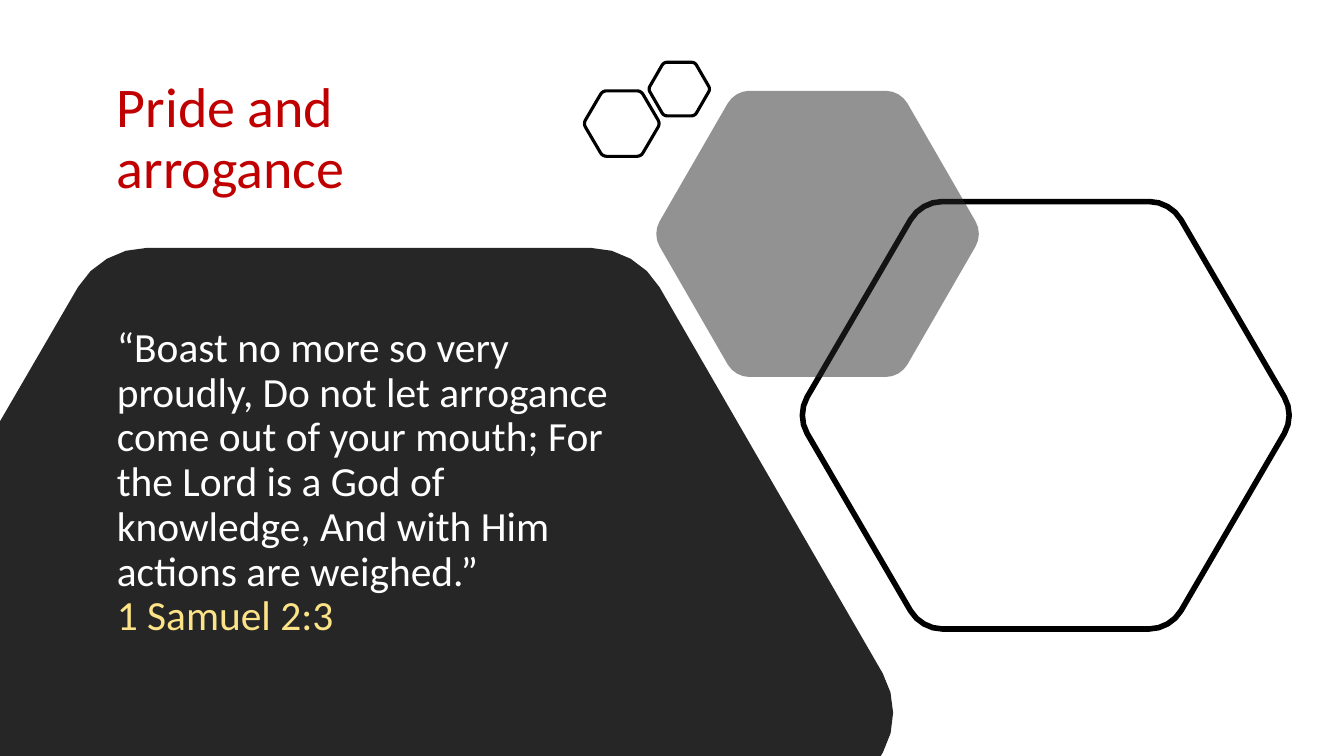
from math import hypot

from lxml.etree import SubElement
from pptx import Presentation
from pptx.dml.color import RGBColor
from pptx.enum.text import MSO_ANCHOR, MSO_AUTO_SIZE, PP_ALIGN
from pptx.oxml.ns import qn
from pptx.util import Cm, Pt

BLACK = RGBColor(0x00, 0x00, 0x00)
CHARCOAL = RGBColor(0x26, 0x26, 0x26)
RED = RGBColor(0xC0, 0x00, 0x00)
WHITE = RGBColor(0xFF, 0xFF, 0xFF)
YELLOW = RGBColor(0xFD, 0xE3, 0x88)

TITLE = "Pride and arrogance"
QUOTE = ("“Boast no more so very proudly, Do not let arrogance come out of your "
         "mouth; For the Lord is a God of knowledge, And with Him actions are weighed.” ")
VERSE = "1 Samuel 2:3"

# Lengths in centimetres; each corner is x, y and the length rounded off.
PANEL = [(0, 19.05, 0), (0, 10.62, 0), (2.54, 6.25, 1.14), (16.05, 6.25, 1.14),
         (22.82, 17.96, 1.14), (22.2, 19.05, 0)]
# Left, top, width, height, rounding, then the paint.
HEXAGONS = [
    (20.22, 5.08, 12.27, 10.77, 0.53, {"line": BLACK, "weight": 4}),
    (16.54, 2.29, 8.13, 7.21, 0.36, {"fill": CHARCOAL, "opacity": 50}),
    (14.73, 2.29, 1.88, 1.65, 0.1, {"line": BLACK, "weight": 2.25}),
    (16.36, 1.57, 1.52, 1.35, 0.08, {"line": BLACK, "weight": 2.25}),
]
CURVE_PULL = 0.6
CURVE_STEPS = 4


def hexagon_corners(left, top, width, height, rounding):
    """Corners whose rounded outline fills the given box."""
    overhang = rounding / 2 * (1 - 0.75 * CURVE_PULL)
    left, width = left - overhang, width + 2 * overhang
    middle, bottom = top + height / 2, top + height
    corners = [(0, middle), (0.25, top), (0.75, top),
               (1, middle), (0.75, bottom), (0.25, bottom)]
    return [(left + share * width, y, rounding) for share, y in corners]


def toward(start, end, distance):
    share = distance / hypot(end[0] - start[0], end[1] - start[1])
    return tuple(a + (b - a) * share for a, b in zip(start, end))


def rounded_outline(corners):
    """Points along the polygon, with a Bezier curve at each rounded corner."""
    points = []
    for index, (x, y, rounding) in enumerate(corners):
        corner = (x, y)
        if not rounding:
            points.append(corner)
            continue
        before = corners[index - 1][:2]
        after = corners[(index + 1) % len(corners)][:2]
        lengths = (rounding, rounding * (1 - CURVE_PULL))
        start, pull_in = [toward(corner, before, length) for length in lengths]
        end, pull_out = [toward(corner, after, length) for length in lengths]
        for step in range(CURVE_STEPS + 1):
            t = step / CURVE_STEPS
            weights = ((1 - t) ** 3, 3 * t * (1 - t) ** 2, 3 * t ** 2 * (1 - t), t ** 3)
            controls = (start, pull_in, pull_out, end)
            points.append(tuple(sum(w * c[axis] for w, c in zip(weights, controls))
                                for axis in (0, 1)))
    return points


def draw_rounded(slide, corners, fill=None, opacity=100, line=None, weight=1):
    first, *rest = [(Cm(x), Cm(y)) for x, y in rounded_outline(corners)]
    builder = slide.shapes.build_freeform(*first)
    builder.add_line_segments(rest, close=True)
    outline = builder.convert_to_shape()
    outline.shadow.inherit = False
    if fill is None:
        outline.fill.background()
    else:
        outline.fill.solid()
        outline.fill.fore_color.rgb = fill
        if opacity < 100:
            colour = outline.element.spPr.find(f"{qn('a:solidFill')}/{qn('a:srgbClr')}")
            SubElement(colour, qn("a:alpha"), val=str(opacity * 1000))
    if line is None:
        outline.line.fill.background()
    else:
        outline.line.color.rgb = line
        outline.line.width = Pt(weight)


def add_text(paragraph, text, size, color, font="Calibri"):
    run = paragraph.add_run()
    run.text = text
    run.font.name = font
    run.font.size = Pt(size)
    run.font.color.rgb = color


def prepare(placeholder, left, top, width, height, anchor):
    """Place a placeholder and return its plain, left-aligned paragraph."""
    placeholder.left, placeholder.top = Cm(left), Cm(top)
    placeholder.width, placeholder.height = Cm(width), Cm(height)
    frame = placeholder.text_frame
    frame.word_wrap = True
    frame.auto_size = MSO_AUTO_SIZE.NONE
    frame.vertical_anchor = anchor
    paragraph = frame.paragraphs[0]
    paragraph.alignment = PP_ALIGN.LEFT
    paragraph.line_spacing = 0.9
    return paragraph


def main():
    deck = Presentation()
    deck.slide_width, deck.slide_height = Cm(33.87), Cm(19.05)
    slide = deck.slides.add_slide(deck.slide_layouts[1])

    heading = prepare(slide.shapes.title, 2.69, 1.24, 11.89, 4.57, MSO_ANCHOR.MIDDLE)
    add_text(heading, TITLE, size=40, color=RED)

    draw_rounded(slide, PANEL, fill=CHARCOAL)
    for *box, paint in HEXAGONS:
        draw_rounded(slide, hexagon_corners(*box), **paint)

    body = slide.placeholders[1]
    slide.shapes.element.append(body.element)  # in front of the dark panel
    passage = prepare(body, 2.69, 8.1, 13.18, 8.59, MSO_ANCHOR.TOP)
    passage.space_before = Pt(10)
    add_text(passage, QUOTE, size=29.6, color=WHITE)
    passage.add_line_break()
    add_text(passage, VERSE, size=29.6, color=YELLOW)
    properties = passage._p.get_or_add_pPr()
    properties.set("marL", "0")
    properties.set("indent", "0")
    SubElement(properties, qn("a:buNone"))

    deck.save("out.pptx")


if __name__ == "__main__":
    main()
